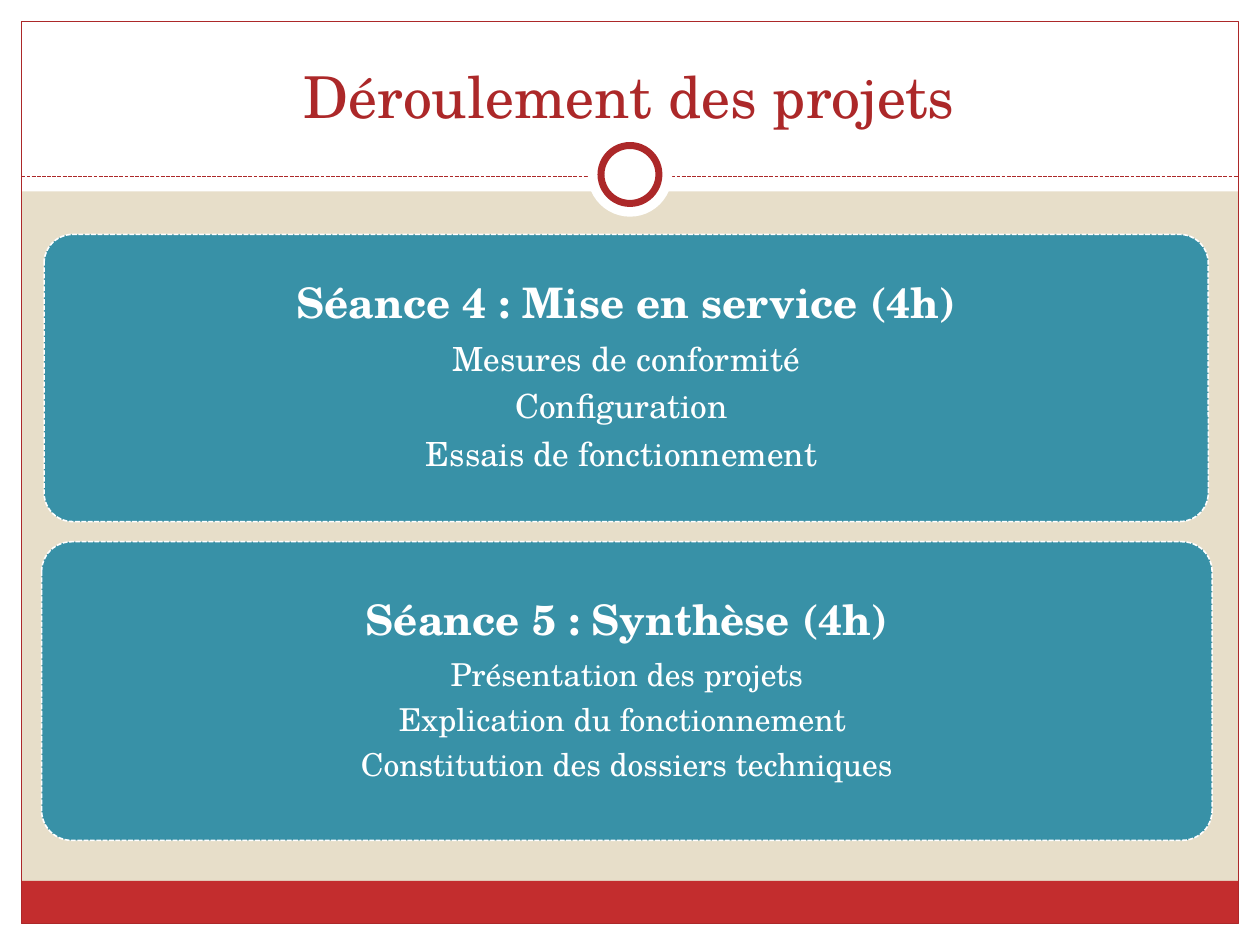
"""Build the slide that presents project sessions 4 and 5."""
from pptx import Presentation
from pptx.dml.color import RGBColor
from pptx.enum.dml import MSO_LINE
from pptx.enum.shapes import MSO_CONNECTOR, MSO_SHAPE as SHAPE
from pptx.enum.text import MSO_ANCHOR, MSO_AUTO_SIZE, PP_ALIGN
from pptx.oxml.ns import qn
from pptx.util import Emu, Inches, Pt
from lxml.etree import SubElement

WIDTH, HEIGHT = Inches(10), Inches(7.5)
FONT = "TeX Gyre Schola"
WHITE, SAND, TEAL = "FFFFFF", "E7DEC9", "3891A7"
RED, DARK_RED = "C32D2E", "AC2829"
MARGIN, EDGE = 1.7, 2.27
INNER = 100 - 2 * MARGIN
RULE_Y = 18.67

SESSIONS = [
    ((3.5, 24.8, 92.4, 30.4), 19, "Séance 4 : Mise en service (4h)",
     ["Mesures de conformité", "Configuration ", "Essais de fonctionnement "]),
    ((3.3, 57.33, 92.9, 31.6), 18, "Séance 5 : Synthèse (4h)",
     ["Présentation des projets", "Explication du fonctionnement ",
      "Constitution des dossiers techniques"]),
]


def color(hex_code):
    """Turn a hex string into a colour."""
    return RGBColor.from_string(hex_code)


def across(share):
    """Give a percentage of the slide's width."""
    return Emu(int(WIDTH * share / 100))


def down(share):
    """Give a percentage of the slide's height."""
    return Emu(int(HEIGHT * share / 100))


def area(left, top, width, height):
    """Turn four percentages into a position and a size."""
    return across(left), down(top), across(width), down(height)


def style_line(line, hex_code, weight, dashed=False):
    """Set the colour, weight and dash of a line."""
    line.color.rgb = color(hex_code)
    line.width = Pt(weight)
    if dashed:
        line.dash_style = MSO_LINE.SQUARE_DOT


def add_block(slide, kind, bounds, fill=None, outline=None):
    """Add a preset shape with an optional fill and outline."""
    block = slide.shapes.add_shape(kind, *bounds)
    block.shadow.inherit = False
    if fill:
        block.fill.solid()
        block.fill.fore_color.rgb = color(fill)
    else:
        block.fill.background()
    if outline:
        style_line(block.line, *outline)
    else:
        block.line.fill.background()
    return block


def add_rule(slide):
    """Add the dashed rule under the title."""
    y = down(RULE_Y)
    rule = slide.shapes.add_connector(
        MSO_CONNECTOR.STRAIGHT, across(MARGIN), y, across(100 - MARGIN), y)
    style_line(rule.line, DARK_RED, 0.75, dashed=True)
    SubElement(rule.element.spPr, qn("a:effectLst"))


def add_ring(slide):
    """Add the ring on a white disc at the middle of the rule."""
    middle = Inches(1.385)
    for diameter, outline in ((0.67, None), (0.46, (DARK_RED, 4))):
        size = Inches(diameter)
        bounds = (WIDTH - size) // 2, middle - size // 2, size, size
        add_block(slide, SHAPE.OVAL, bounds, WHITE, outline)


def add_frame(slide):
    """Add the white margins, the red footer and the thin frame."""
    margins = [
        (0, 100 - EDGE, 100, EDGE),
        (0, 0, 100, 20.27),
        (0, 0, MARGIN, 100),
        (100 - MARGIN, 0, MARGIN, 100),
    ]
    for margin in margins:
        add_block(slide, SHAPE.RECTANGLE, area(*margin), WHITE)
    footer = area(MARGIN, 93.2, INNER, 4.53)
    add_block(slide, SHAPE.RECTANGLE, footer, RED)
    frame = area(MARGIN, EDGE, INNER, 100 - 2 * EDGE)
    add_block(slide, SHAPE.RECTANGLE, frame, outline=(DARK_RED, 0.75))


def style_text(paragraph, size, hex_code, bold=False):
    """Centre a paragraph and format its runs."""
    paragraph.alignment = PP_ALIGN.CENTER
    for run in paragraph.runs:
        run.font.name = FONT
        run.font.size = Pt(size)
        run.font.bold = bold
        run.font.color.rgb = color(hex_code)


def set_title(slide, text):
    """Fill the title placeholder and bring it in front of the frame."""
    title = slide.shapes.title
    title.left, title.top, title.width, title.height = area(3.3, 3.33, 93.3, 11.07)
    heading = title.text_frame
    heading.text = text
    heading.auto_size = MSO_AUTO_SIZE.NONE
    heading.vertical_anchor = MSO_ANCHOR.BOTTOM
    style_text(heading.paragraphs[0], 33, DARK_RED)
    slide.shapes.element.append(title.element)


def add_session(slide, bounds, topic_size, heading, topics):
    """Add a rounded card with a session's heading and topics."""
    card = add_block(slide, SHAPE.ROUNDED_RECTANGLE, area(*bounds),
                     TEAL, (WHITE, 0.9, True))
    card.adjustments[0] = 0.1
    content = card.text_frame
    content.word_wrap = True
    content.vertical_anchor = MSO_ANCHOR.MIDDLE
    content.text = "\n".join([heading, *topics])
    for index, paragraph in enumerate(content.paragraphs):
        size = topic_size if index else 24
        style_text(paragraph, size, WHITE, bold=index == 0)
        paragraph.line_spacing = 0.9
        paragraph.space_after = Pt(0.35 * size)


def main():
    """Build and save the slide."""
    deck = Presentation()
    deck.slide_width, deck.slide_height = WIDTH, HEIGHT
    slide = deck.slides.add_slide(deck.slide_layouts[5])
    slide.background.fill.solid()
    slide.background.fill.fore_color.rgb = color(SAND)
    add_frame(slide)
    add_rule(slide)
    add_ring(slide)
    set_title(slide, "Déroulement des projets")
    for session in SESSIONS:
        add_session(slide, *session)
    deck.save("out.pptx")


if __name__ == "__main__":
    main()
